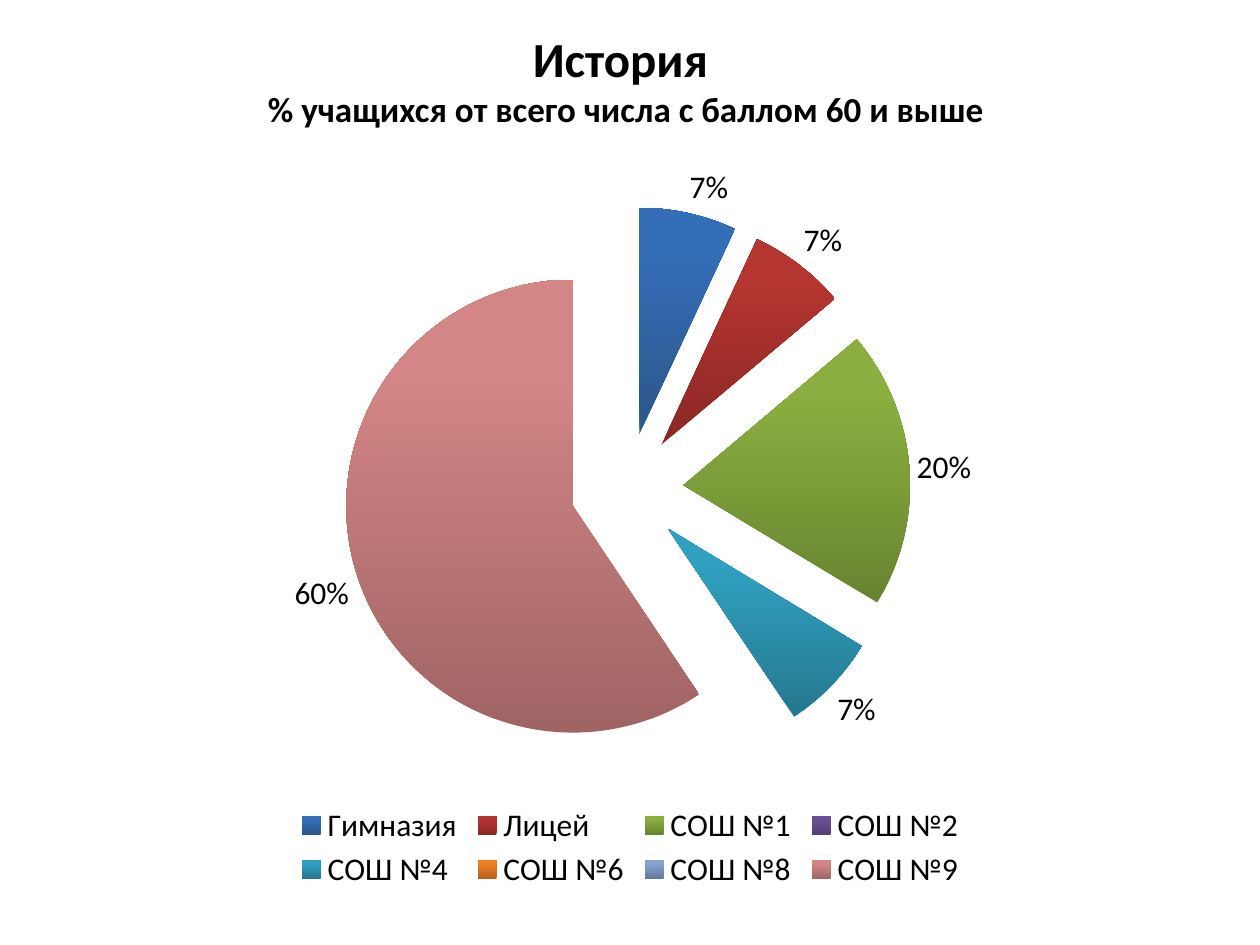
from dataclasses import dataclass

from lxml.etree import SubElement
from pptx import Presentation
from pptx.chart.data import CategoryChartData
from pptx.dml.color import RGBColor
from pptx.enum.chart import XL_CHART_TYPE as ChartType
from pptx.enum.chart import XL_LABEL_POSITION as LabelPos
from pptx.enum.chart import XL_LEGEND_POSITION as LegendPos
from pptx.enum.text import MSO_ANCHOR, PP_ALIGN
from pptx.oxml.ns import qn
from pptx.util import Emu, Pt


@dataclass(frozen=True)
class Theme:
    font: str = "Calibri"
    ink: str = "000000"
    title: int = 28
    subtitle: int = 20
    chart: int = 18


@dataclass(frozen=True)
class School:
    name: str
    percent: int | None
    dark: str
    light: str


THEME = Theme()
EXPLOSION = 25
SCHOOLS = [
    School("Гимназия", 7, "2C5788", "346DB8"),
    School("Лицей", 7, "8A2725", "B53530"),
    School("СОШ №1", 20, "698430", "8AAF40"),
    School("СОШ №2", None, "553E76", "6C4F95"),
    School("СОШ №4", 7, "25788F", "2FA0C0"),
    School("СОШ №6", None, "B5611B", "F07D22"),
    School("СОШ №8", None, "64789F", "86A1D0"),
    School("СОШ №9", 60, "A06464", "D48686"),
]


def px(n: int) -> Emu:
    return Emu(round(n * 914400 / 126))


def style_font(font, size: int, bold: bool = False) -> None:
    font.name = THEME.font
    font.size = Pt(size)
    font.bold = bold
    font.color.rgb = RGBColor.from_string(THEME.ink)


def add_title(s) -> None:
    sp = s.shapes.title
    sp.left, sp.top, sp.width, sp.height = px(59), px(0), px(1134), px(158)
    tf = sp.text_frame
    tf.word_wrap = True
    tf.vertical_anchor = MSO_ANCHOR.MIDDLE
    p = tf.paragraphs[0]
    p.alignment = PP_ALIGN.CENTER
    r = p.add_run()
    r.text = "История "
    style_font(r.font, THEME.title, bold=True)
    p.add_line_break()
    r = p.add_run()
    r.text = "% учащихся от всего числа с баллом 60 и выше"
    style_font(r.font, THEME.subtitle, bold=True)


def shade_slice(point, school: School) -> None:
    """Fill a slice from dark at the bottom to light at the top."""
    fill = point.format.fill
    fill.gradient()
    fill.gradient_angle = 90
    stops = zip(fill.gradient_stops, (school.dark, school.light), (0, 0.8))
    for stop, color, position in stops:
        stop.color.rgb = RGBColor.from_string(color)
        stop.position = position
    point.format.line.fill.background()


def add_pie(s) -> None:
    data = CategoryChartData()
    data.categories = [school.name for school in SCHOOLS]
    data.add_series("Series 1", [school.percent for school in SCHOOLS])
    chart = s.shapes.add_chart(
        ChartType.PIE, px(59), px(147), px(1142), px(748), data
    ).chart
    chart.has_title = False
    style_font(chart.font, THEME.chart)

    # Slices
    plot = chart.plots[0]
    plot.vary_by_categories = True
    series = plot.series[0]
    ser = series._element
    explosion = SubElement(ser, qn("c:explosion"), val=str(EXPLOSION))
    ser.find(qn("c:tx")).addnext(explosion)
    for i, school in enumerate(SCHOOLS):
        shade_slice(series.points[i], school)

    # Labels: the values are whole percentages already
    labels = series.data_labels
    labels.show_value = True
    labels.number_format = '0"%"'
    labels.number_format_is_linked = False
    labels.position = LabelPos.OUTSIDE_END
    style_font(labels.font, THEME.chart)

    # Legend
    chart.has_legend = True
    chart.legend.position = LegendPos.BOTTOM
    chart.legend.include_in_layout = False
    style_font(chart.legend.font, THEME.chart)


def main() -> None:
    prs = Presentation()
    prs.slide_width, prs.slide_height = px(1260), px(945)
    s = prs.slides.add_slide(prs.slide_layouts[5])
    add_title(s)
    add_pie(s)
    prs.save("out.pptx")


if __name__ == "__main__":
    main()
